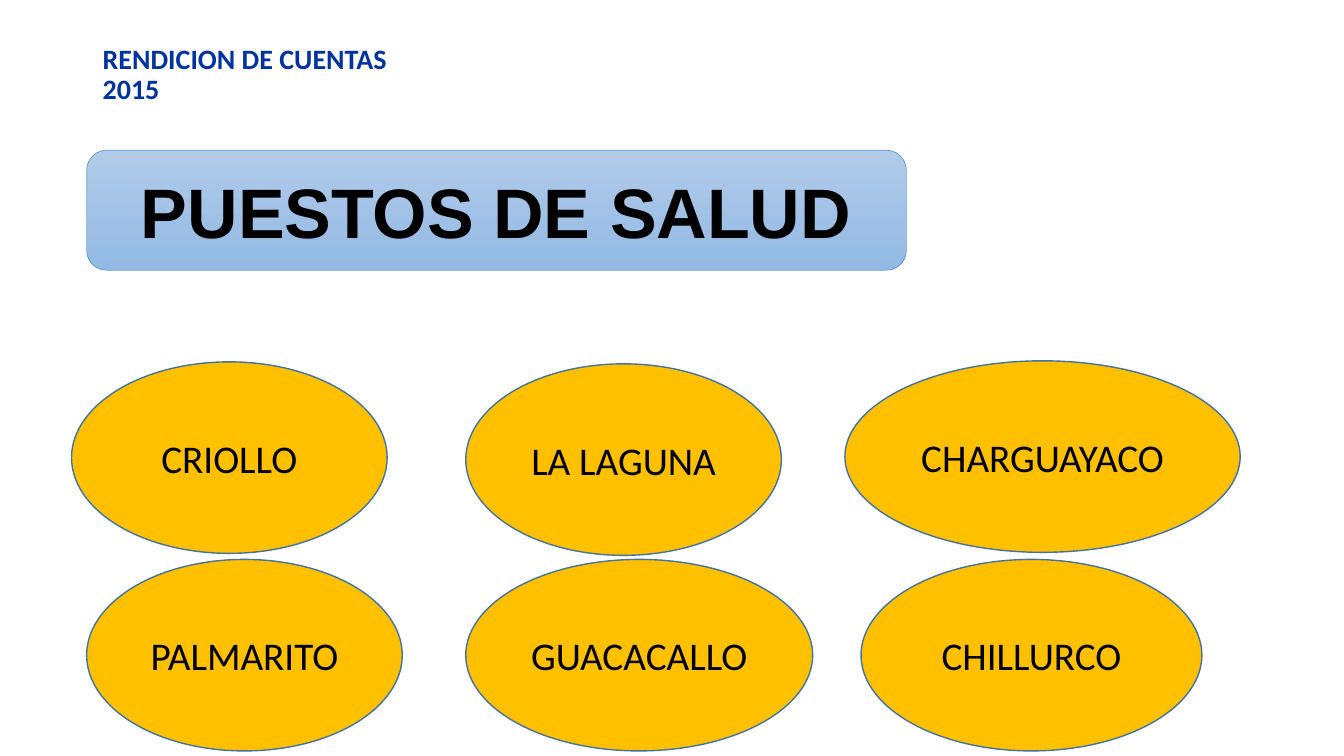
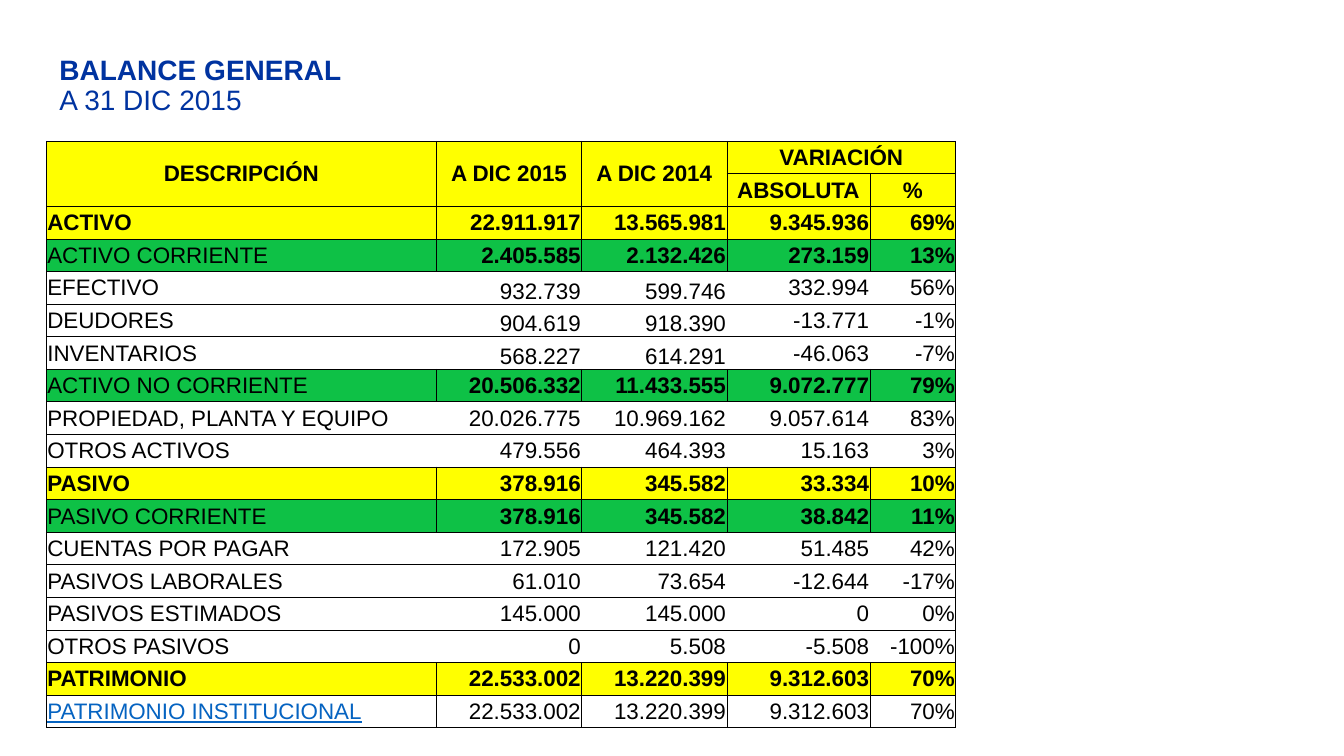
import pptx
import pptx.util
import pptx.dml.color
import pptx.enum.shapes
import pptx.enum.text
import pptx.oxml.ns
from lxml import etree

Inches, Pt = pptx.util.Inches, pptx.util.Pt
SHAPE = pptx.enum.shapes.MSO_SHAPE
ALIGN = pptx.enum.text.PP_ALIGN
ANCHOR = pptx.enum.text.MSO_ANCHOR

NAVY, BLACK, LINK = "0033A0", "000000", "0563C1"
YELLOW, GREEN, AMBER = "FFFF00", "0EC146", "FFC000"

POSTS = [
    ("CRIOLLO", 0.71, 3.59, 3.13),
    ("LA LAGUNA", 4.62, 3.61, 3.13),
    ("CHARGUAYACO", 8.38, 3.58, 3.92),
    ("PALMARITO", 0.86, 5.55, 3.13),
    ("GUACACALLO", 4.62, 5.55, 3.44),
    ("CHILLURCO", 8.54, 5.55, 3.38),
]
POST_HEIGHT = 1.9

HEADER = [
    ("DESCRIPCIÓN", "A DIC 2015", "A DIC 2014", "VARIACIÓN", ""),
    ("", "", "", "ABSOLUTA", "%"),
]
HEADER_SPANS = [((0, 0), (1, 0)), ((0, 1), (1, 1)), ((0, 2), (1, 2)), ((0, 3), (0, 4))]
BALANCE = [
    ("total", "ACTIVO", "22.911.917", "13.565.981", "9.345.936", "69%"),
    ("group", "ACTIVO CORRIENTE", "2.405.585", "2.132.426", "273.159", "13%"),
    ("low", "EFECTIVO", "932.739", "599.746", "332.994", "56%"),
    ("low", "DEUDORES", "904.619", "918.390", "-13.771", "-1%"),
    ("low", "INVENTARIOS", "568.227", "614.291", "-46.063", "-7%"),
    ("group", "ACTIVO NO CORRIENTE", "20.506.332", "11.433.555", "9.072.777", "79%"),
    ("item", "PROPIEDAD, PLANTA Y EQUIPO", "20.026.775", "10.969.162", "9.057.614", "83%"),
    ("item", "OTROS ACTIVOS", "479.556", "464.393", "15.163", "3%"),
    ("total", "PASIVO", "378.916", "345.582", "33.334", "10%"),
    ("group", "PASIVO CORRIENTE", "378.916", "345.582", "38.842", "11%"),
    ("item", "CUENTAS POR PAGAR", "172.905", "121.420", "51.485", "42%"),
    ("item", "PASIVOS LABORALES", "61.010", "73.654", "-12.644", "-17%"),
    ("item", "PASIVOS ESTIMADOS", "145.000", "145.000", "0", "0%"),
    ("item", "OTROS PASIVOS", "0", "5.508", "-5.508", "-100%"),
    ("total", "PATRIMONIO", "22.533.002", "13.220.399", "9.312.603", "70%"),
    ("link", "PATRIMONIO INSTITUCIONAL", "22.533.002", "13.220.399", "9.312.603", "70%"),
]
FILLS = {"header": YELLOW, "total": YELLOW, "group": GREEN}
COL_WIDTHS = [3.87, 1.44, 1.44, 1.42, 0.85]
TABLE_LEFT, TABLE_TOP, TABLE_HEIGHT = 0.46, 1.4, 5.82


def rgb(value):
    return pptx.dml.color.RGBColor.from_string(value)


def style(font, name, size, color, bold=None):
    font.name, font.size, font.bold = name, Pt(size), bold
    font.color.rgb = rgb(color)


def add_title(s, box, font_name, lines):
    tf = s.shapes.add_textbox(*map(Inches, box)).text_frame
    tf.word_wrap = True
    p = tf.paragraphs[0]
    p.line_spacing = 0.9
    style(p.font, font_name, 20, NAVY)
    for i, (text, bold) in enumerate(lines):
        if i:
            p.add_line_break()
        r = p.add_run()
        r.text, r.font.bold = text, bold


def add_label(s, kind, box, text, line, font_name, size, bold):
    sp = s.shapes.add_shape(kind, *map(Inches, box))
    sp.shadow.inherit = False
    sp.line.color.rgb, sp.line.width = rgb(line[0]), Pt(line[1])
    tf = sp.text_frame
    tf.word_wrap = True
    tf.vertical_anchor = ANCHOR.MIDDLE
    p = tf.paragraphs[0]
    p.text, p.alignment = text, ALIGN.CENTER
    style(p.font, font_name, size, BLACK, bold)
    return sp


def set_borders(cell, sides):
    qn = pptx.oxml.ns.qn
    tc_pr = cell._tc.get_or_add_tcPr()
    for side in "LRTB":
        ln = etree.SubElement(tc_pr, qn("a:ln" + side), w=str(Pt(0.5)))
        if side in sides:
            fill = etree.SubElement(ln, qn("a:solidFill"))
            etree.SubElement(fill, qn("a:srgbClr"), val=BLACK)
        else:
            etree.SubElement(ln, qn("a:noFill"))


def fill_cell(cell, kind, col, text):
    sides = "LRTB"
    if kind in ("item", "low"):
        sides = "TB" + ("L" if col == 0 else "R" if col == 4 else "")
    set_borders(cell, sides)
    if kind in FILLS:
        cell.fill.solid()
        cell.fill.fore_color.rgb = rgb(FILLS[kind])
    else:
        cell.fill.background()
    cell.margin_left = cell.margin_right = cell.margin_top = Inches(0.01)
    cell.margin_bottom = 0
    low = kind == "low" and col in (1, 2)
    cell.vertical_anchor = ANCHOR.BOTTOM if low else ANCHOR.MIDDLE
    p = cell.text_frame.paragraphs[0]
    p.text = text
    if kind == "header":
        p.alignment = ALIGN.CENTER
    else:
        p.alignment = ALIGN.RIGHT if col else ALIGN.LEFT
    bold = kind in ("header", "total") or (kind == "group" and col > 0)
    linked = kind == "link" and col == 0
    style(p.font, "Arial", 16, LINK if linked else BLACK, bold)
    p.font.underline = linked


def build_posts(s):
    add_title(s, (0.92, 0.4, 3.24, 0.39), "Calibri", [("RENDICION DE CUENTAS 2015", True)])
    banner = add_label(s, SHAPE.ROUNDED_RECTANGLE, (0.86, 1.49, 8.13, 1.19),
                       "PUESTOS DE SALUD", ("5B9BD5", 0.5), "Arial", 50, True)
    banner.fill.gradient()
    banner.fill.gradient_angle = 270
    for stop, color in zip(banner.fill.gradient_stops, ("B1CBE9", "93B9E4")):
        stop.color.rgb = rgb(color)
    for name, left, top, width in POSTS:
        post = add_label(s, SHAPE.OVAL, (left, top, width, POST_HEIGHT),
                         name, ("43739E", 1), "Calibri", 28, False)
        post.fill.solid()
        post.fill.fore_color.rgb = rgb(AMBER)


def build_balance(s):
    rows = [("header", *row) for row in HEADER] + BALANCE
    box = (TABLE_LEFT, TABLE_TOP, sum(COL_WIDTHS), TABLE_HEIGHT)
    table = s.shapes.add_table(len(rows), len(COL_WIDTHS), *map(Inches, box)).table
    table.first_row = table.horz_banding = False
    for column, width in zip(table.columns, COL_WIDTHS):
        column.width = Inches(width)
    for i, (kind, *texts) in enumerate(rows):
        table.rows[i].height = Inches(TABLE_HEIGHT / len(rows))
        for j, text in enumerate(texts):
            fill_cell(table.cell(i, j), kind, j, text)
    for first, last in HEADER_SPANS:
        table.cell(*first).merge(table.cell(*last))
    add_title(s, (0.49, 0.51, 4.19, 0.76), "Arial",
              [("BALANCE GENERAL", True), ("A 31 DIC 2015", False)])


def main():
    prs = pptx.Presentation()
    prs.slide_width, prs.slide_height = Inches(13.33), Inches(7.5)
    for build in (build_posts, build_balance):
        build(prs.slides.add_slide(prs.slide_layouts[6]))
    prs.save("out.pptx")


if __name__ == "__main__":
    main()
